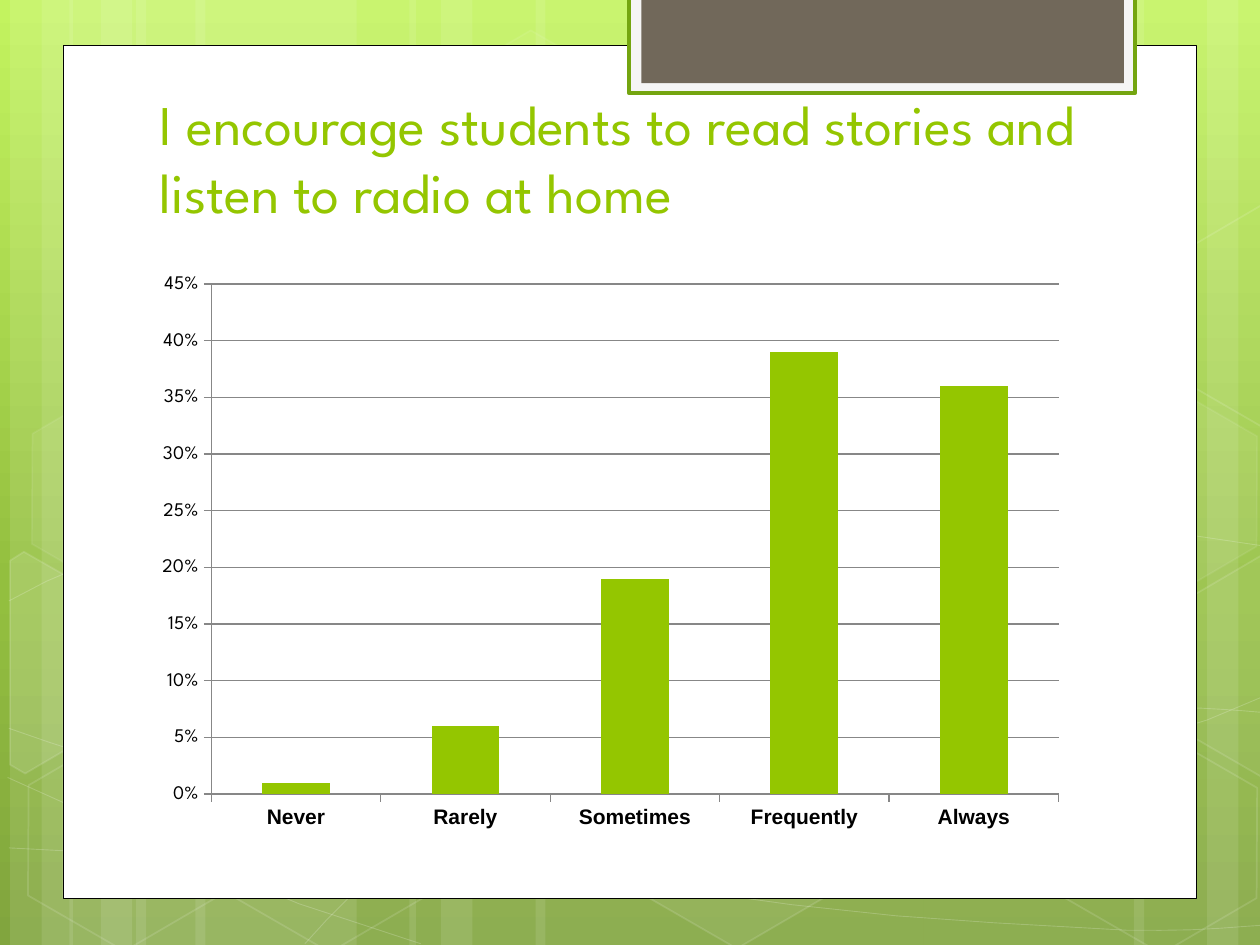
from copy import deepcopy
from dataclasses import dataclass

from lxml import etree
from pptx import Presentation
from pptx.chart.data import CategoryChartData
from pptx.dml.color import RGBColor
from pptx.enum import chart as chart_enum, shapes, text
from pptx.oxml.ns import qn
from pptx.util import Inches, Pt


@dataclass(frozen=True)
class Theme:
    white: str = "FFFFFF"
    black: str = "000000"
    green: str = "94C600"
    tab_border: str = "74A510"
    tab_edge: str = "F5F5F5"
    tab: str = "71685A"
    axis: str = "878787"
    background: tuple = ((0, "C3F35F"), (0.62, "93BF3F"), (1, "81A53E"))
    font: str = "League Spartan"
    category_font: str = "Arial"
    title_size: int = 32
    chart_size: int = 10
    value_size: int = 11
    category_size: int = 12


theme = Theme()


def paint(shape, fill=None, fill_alpha=100, line=None, line_alpha=100, width=1):
    """Set fill and outline; alpha is opacity in percent."""
    shape.shadow.inherit = False
    properties = shape.element.spPr
    for target, color, alpha, location in (
        (shape.fill, fill, fill_alpha, "a:solidFill"),
        (shape.line.fill, line, line_alpha, "a:ln/a:solidFill"),
    ):
        if color is None:
            target.background()
            continue
        target.solid()
        target.fore_color.rgb = RGBColor.from_string(color)
        if alpha < 100:
            solid = properties.find("/".join(qn(tag) for tag in location.split("/")))
            etree.SubElement(solid[0], qn("a:alpha"), val=str(alpha * 1000))
    if line:
        shape.line.width = Pt(width)


def add_text(slide, box, content, size, color, font, anchor):
    frame = slide.shapes.add_textbox(*map(Inches, box)).text_frame
    frame.word_wrap = True
    frame.vertical_anchor = anchor
    run = frame.paragraphs[0].add_run()
    run.text = content
    run.font.size = Pt(size)
    run.font.name = font
    run.font.color.rgb = RGBColor.from_string(color)


presentation = Presentation()
presentation.slide_width = Inches(10)
presentation.slide_height = Inches(7.5)
slide = presentation.slides.add_slide(presentation.slide_layouts[6])

# Background gradient, top to bottom
background = slide.background.fill
background.gradient()
background.gradient_angle = 270
stop_list = next(slide.element.iter(qn("a:gsLst")))
stop_list.append(deepcopy(stop_list[-1]))
for stop, (position, color) in zip(background.gradient_stops, theme.background):
    stop.position = position
    stop.color.rgb = RGBColor.from_string(color)

# Pale vertical strips: left, width
strips = [
    (1.08, 1.75), (0.08, 0.5), (0.33, 0.83), (1.55, 1.75), (0.55, 0.5), (0.8, 0.83),
    (7.33, 1.75), (9.58, 0.5), (9, 0.83), (4.25, 3.08), (3.25, 0.5), (3.5, 0.83),
]
for left, width in strips:
    strip = slide.shapes.add_shape(
        shapes.MSO_SHAPE.RECTANGLE, Inches(left), 0, Inches(width), Inches(7.5))
    paint(strip, theme.white, 10)

# Flowing curves: a start point, then two controls and an end per Bezier segment
curves = [
    [(0.07, 6.73), (0.61, 6.76), (1.15, 6.79), (1.9, 6.78), (2.65, 6.77), (3.58, 6.75),
     (4.58, 6.65), (5.58, 6.55), (7, 6.36), (7.92, 6.17), (8.83, 5.98), (9.77, 5.68),
     (10.07, 5.51)],
    [(0.07, 4.77), (0.36, 4.61), (0.65, 4.46), (1.21, 4.31), (1.78, 4.16), (2.59, 3.94),
     (3.47, 3.87), (4.36, 3.8), (5.44, 3.79), (6.54, 3.87), (7.64, 3.95), (9.47, 4.26),
     (10.07, 4.34)],
    [(0.06, 6.17), (1.27, 6.72), (2.47, 7.27), (3.34, 7.49)],
    [(0.07, 5.78), (0.38, 5.89), (0.7, 6), (1.28, 6.16), (1.86, 6.31), (2.73, 6.56),
     (3.57, 6.73), (4.4, 6.9), (5.45, 7.08), (6.28, 7.18), (7.11, 7.29), (8, 7.33),
     (8.53, 7.36), (9.05, 7.4), (9.19, 7.38), (9.45, 7.38), (9.71, 7.37), (9.89, 7.35),
     (10.07, 7.34)],
    [(2.42, 7.49), (2.6, 7.29), (2.78, 7.09), (3.02, 6.91), (3.26, 6.73), (3.6, 6.53),
     (3.88, 6.39), (4.16, 6.25), (4.33, 6.19), (4.7, 6.09), (5.06, 5.99), (5.73, 5.85),
     (6.08, 5.78), (6.44, 5.71), (6.49, 5.71), (6.8, 5.69), (7.11, 5.66), (7.6, 5.63),
     (7.94, 5.62), (8.29, 5.61), (8.86, 5.62), (8.86, 5.62), (9.08, 5.62), (9.31, 5.62),
     (9.53, 5.62), (9.71, 5.63), (9.88, 5.64), (9.97, 5.65), (10.06, 5.66),
     (10.03, 5.65), (10.06, 5.66)],
]
steps = 3
for points in curves:
    samples = []
    for start in range(0, len(points) - 1, 3):
        for step in range(1, steps + 1):
            t = step / steps
            weights = ((1 - t) ** 3, 3 * t * (1 - t) ** 2, 3 * t * t * (1 - t), t ** 3)
            segment = points[start:start + 4]
            samples.append(tuple(
                Inches(sum(weight * point[axis] for weight, point in zip(weights, segment)))
                for axis in (0, 1)))
    builder = slide.shapes.build_freeform(*map(Inches, points[0]))
    builder.add_line_segments(samples, close=False)
    paint(builder.convert_to_shape(), line=theme.white, line_alpha=20, width=0.5)

# Hexagons: left, top, fill opacity, line opacity
hexagons = [
    (3.34, 0.36, 4, 8), (4.97, 5.89, 6, 12), (0.11, 5.91, 0, 12), (0.14, 3.12, 7, 8),
    (1.74, 5.92, 0, 12), (7.53, 4.53, 10, 12), (8.34, 5.93, 0, 12), (8.34, 3.14, 7, 8),
]
for left, top, fill_alpha, line_alpha in hexagons:
    hexagon = slide.shapes.add_shape(
        shapes.MSO_SHAPE.HEXAGON, Inches(left), Inches(top), Inches(1.75), Inches(1.52))
    hexagon.adjustments[0] = 0.285
    hexagon.rotation = 30
    paint(hexagon, theme.white if fill_alpha else None, fill_alpha, theme.white, line_alpha)

# Hexagons cut off at the slide edges: fill opacity, corners
cut_hexagons = [
    (10, [(0.08, 4.45), (0.19, 4.38), (0.96, 4.82), (0.95, 5.7), (0.2, 6.14), (0.08, 6.07)]),
    (4, [(9.26, 4.85), (10.01, 4.41), (10.09, 4.46), (10.09, 6.13), (10.02, 6.17), (9.26, 5.73)]),
    (0, [(9.26, 2.07), (10.01, 1.63), (10.1, 1.68), (10.09, 3.35), (10.02, 3.39), (9.26, 2.95)]),
]
for fill_alpha, corners in cut_hexagons:
    first, *others = [(Inches(x), Inches(y)) for x, y in corners]
    builder = slide.shapes.build_freeform(*first)
    builder.add_line_segments(others, close=True)
    paint(builder.convert_to_shape(), theme.white if fill_alpha else None, fill_alpha,
          theme.white, 12)

# White page and the tab at its top
panels = [
    ((0.5, 0.36, 9, 6.77), theme.white, theme.black, 0.5),
    ((4.99, -0.02, 4.02, 0.76), theme.tab_edge, theme.tab_border, 2),
    ((5.09, -0.02, 3.83, 0.68), theme.tab, None, 0),
]
for box, fill, line, width in panels:
    panel = slide.shapes.add_shape(shapes.MSO_SHAPE.RECTANGLE, *map(Inches, box))
    paint(panel, fill, line=line, width=width)

add_text(slide, (1.17, 0.91, 7.68, 0.92),
         "I encourage students to read stories and listen to radio at home",
         size=theme.title_size, color=theme.green, font=theme.font,
         anchor=text.MSO_ANCHOR.BOTTOM)

# Answers as a column chart
answers = CategoryChartData()
answers.categories = ["Never", "Rarely", "Sometimes", "Frequently", "Always"]
answers.add_series("Series 1", (0.01, 0.06, 0.19, 0.39, 0.36), number_format="0%")
chart = slide.shapes.add_chart(
    chart_enum.XL_CHART_TYPE.COLUMN_CLUSTERED,
    *map(Inches, (1.14, 2.09, 7.41, 4.58)), answers).chart
chart.has_title = False
chart.has_legend = False
chart.font.name = theme.font
chart.font.size = Pt(theme.chart_size)
chart.font.color.rgb = RGBColor.from_string(theme.black)

plot = chart.plots[0]
plot.gap_width = 150
plot.vary_by_categories = False
bars = plot.series[0].format.fill
bars.solid()
bars.fore_color.rgb = RGBColor.from_string(theme.green)

value_axis, category_axis = chart.value_axis, chart.category_axis
value_axis.minimum_scale = 0
value_axis.maximum_scale = 0.45
value_axis.major_unit = 0.05
value_axis.has_major_gridlines = True
value_axis.tick_labels.number_format = "0%"
value_axis.tick_labels.number_format_is_linked = False
value_axis.tick_labels.font.size = Pt(theme.value_size)
category_axis.tick_labels.font.size = Pt(theme.category_size)
category_axis.tick_labels.font.bold = True
category_axis.tick_labels.font.name = theme.category_font
for axis in (value_axis, category_axis):
    axis.major_tick_mark = chart_enum.XL_TICK_MARK.OUTSIDE
for ruled in (value_axis, category_axis, value_axis.major_gridlines):
    ruled.format.line.color.rgb = RGBColor.from_string(theme.axis)
    ruled.format.line.width = Pt(0.75)

presentation.save("out.pptx")
